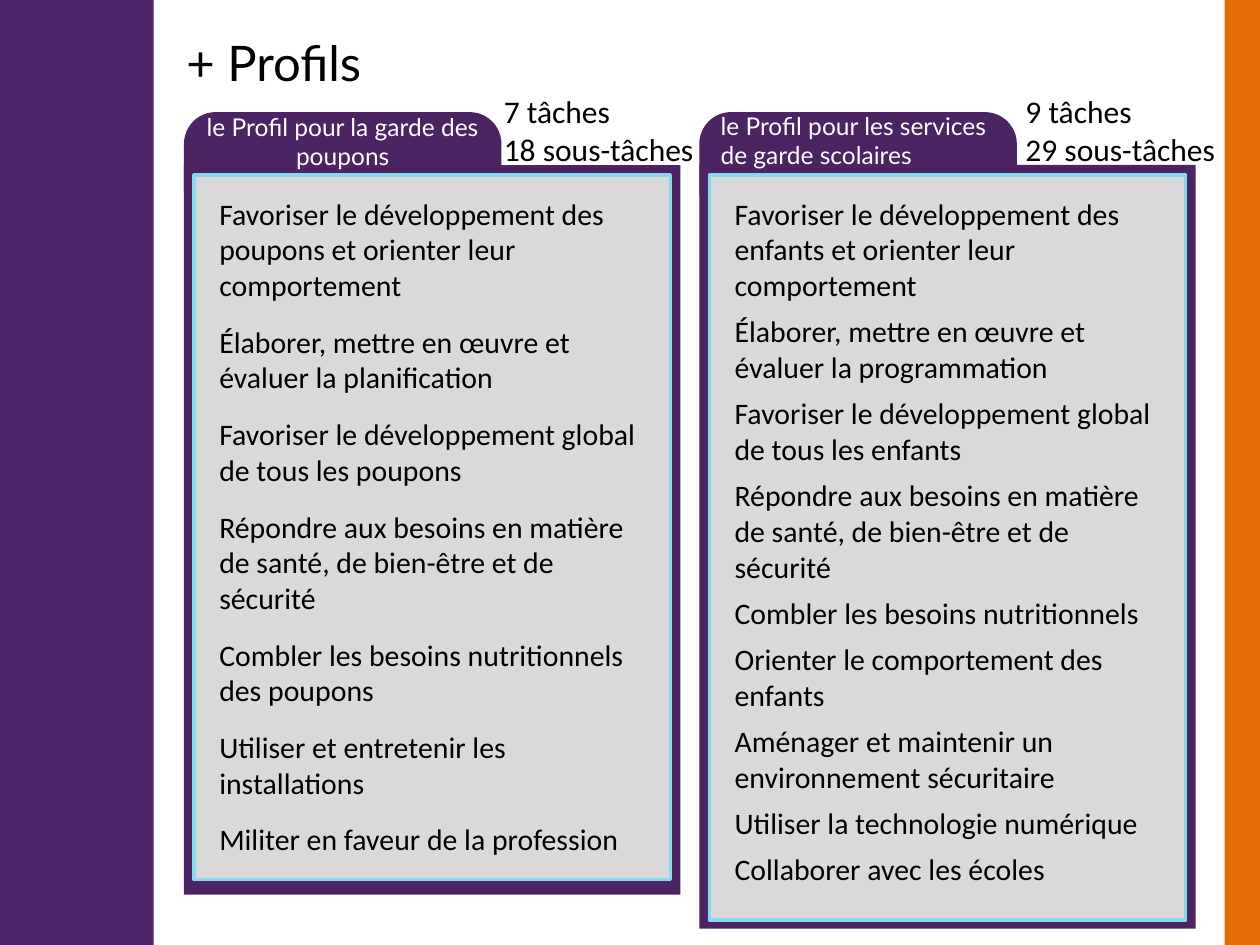
import pptx
import pptx.util
import pptx.dml.color
import pptx.enum.shapes
import pptx.enum.text
import pptx.oxml
import pptx.oxml.ns
from dataclasses import dataclass

Inches = pptx.util.Inches
Shape = pptx.enum.shapes.MSO_SHAPE
Align = pptx.enum.text.PP_ALIGN


@dataclass(frozen=True)
class Theme:
    band: str = "512569"
    edge: str = "E46C0A"
    frame: str = "4C2363"
    panel: str = "D9D9D9"
    panel_line: str = "82DCEE"
    dark: str = "000000"
    light: str = "FFFFFF"
    heading_font: str = "Lato"
    body_font: str = "Calibri"
    title_size: int = 28
    count_size: int = 18
    list_size: int = 17
    tab_size: int = 14


class SlideBuilder:
    def __init__(self, page, theme):
        self.page = page
        self.theme = theme

    def shape(self, kind, place, fill, line=None, corner=None):
        box = self.page.shapes.add_shape(kind, *map(Inches, place))
        box.shadow.inherit = False
        box.fill.solid()
        box.fill.fore_color.rgb = pptx.dml.color.RGBColor.from_string(fill)
        if line:
            box.line.color.rgb = pptx.dml.color.RGBColor.from_string(line)
            box.line.width = pptx.util.Pt(2)
        else:
            box.line.fill.background()
        if corner is not None:
            box.adjustments[0] = corner
        return box

    def set_lines(self, box, lines, font, size, color, align=Align.LEFT, after=0):
        frame = box.text_frame
        frame.word_wrap = True
        frame.auto_size = pptx.enum.text.MSO_AUTO_SIZE.NONE
        frame.vertical_anchor = pptx.enum.text.MSO_ANCHOR.TOP
        frame.text = "\n".join(lines)
        for para in frame.paragraphs:
            para.alignment = align
            para.space_before = pptx.util.Pt(0)
            para.space_after = pptx.util.Pt(after)
            for span in para.runs:
                span.font.name = font
                span.font.size = pptx.util.Pt(size)
                span.font.color.rgb = pptx.dml.color.RGBColor.from_string(color)

    def text(self, place, lines, font, size, color, align=Align.LEFT):
        box = self.page.shapes.add_textbox(*map(Inches, place))
        self.set_lines(box, lines, font, size, color, align)
        return box

    def placeholder(self, index, place):
        box = self.page.placeholders[index]
        box.left, box.top, box.width, box.height = map(Inches, place)
        # Bring the placeholder in front of the panels
        box.element.getparent().append(box.element)
        return box

    def title(self, place, wording):
        theme = self.theme
        self.set_lines(self.placeholder(0, place), [wording], theme.heading_font,
                       theme.title_size, theme.dark)

    def task_list(self, index, place, tasks, after):
        theme = self.theme
        box = self.placeholder(index, place)
        self.set_lines(box, tasks, theme.body_font, theme.list_size, theme.dark, after=after)
        for para in box.text_frame.paragraphs:
            properties = para._p.get_or_add_pPr()
            properties.set("marL", "0")
            properties.set("indent", "0")
            properties.append(pptx.oxml.parse_xml(
                f'<a:buNone {pptx.oxml.ns.nsdecls("a")}/>'))

    def profile(self, index, profile):
        theme = self.theme
        left = profile["left"]
        # Tab, frame and panel
        self.shape(Shape.ROUNDED_RECTANGLE, (left, 0.89, 2.52, 0.87), theme.frame, corner=0.29)
        self.shape(Shape.ROUNDED_RECTANGLE, (left, 1.31, 3.94, profile["frame_height"]),
                   theme.frame, corner=0)
        self.text(profile["tab_place"], [profile["name"]], theme.heading_font,
                  theme.tab_size, theme.light, profile["tab_align"])
        self.shape(Shape.RECTANGLE, (left + 0.08, 1.39, 3.78, profile["panel_height"]),
                   theme.panel, theme.panel_line)
        # Tasks and their counts
        self.task_list(index, (left + 0.18, 1.5, 3.54, profile["list_height"]),
                       profile["tasks"], profile["gap"])
        self.text((profile["count_left"], 0.68, 1.81, 0.71), profile["counts"],
                  theme.body_font, theme.count_size, theme.dark)


PROFILES = [
    {
        "left": 1.46, "frame_height": 5.79, "panel_height": 5.59, "list_height": 5.4,
        "name": "le Profil pour la garde des poupons",
        "tab_place": (1.38, 0.84, 2.68, 0.57), "tab_align": Align.CENTER,
        "count_left": 3.9, "counts": ["7 tâches", "18 sous-tâches"],
        "gap": 12,
        "tasks": [
            "Favoriser le développement des poupons et orienter leur comportement",
            "Élaborer, mettre en œuvre et évaluer la planification",
            "Favoriser le développement global de tous les poupons",
            "Répondre aux besoins en matière de santé, de bien-être et de sécurité",
            "Combler les besoins nutritionnels des poupons",
            "Utiliser et entretenir les installations",
            "Militer en faveur de la profession",
        ],
    },
    {
        "left": 5.55, "frame_height": 6.06, "panel_height": 5.91, "list_height": 5.64,
        "name": "le Profil pour les services de garde scolaires",
        "tab_place": (5.62, 0.83, 2.45, 0.81), "tab_align": Align.LEFT,
        "count_left": 8.04, "counts": ["9 tâches", "29 sous-tâches"],
        "gap": 6,
        "tasks": [
            "Favoriser le développement des enfants et orienter leur comportement",
            "Élaborer, mettre en œuvre et évaluer la programmation",
            "Favoriser le développement global de tous les enfants",
            "Répondre aux besoins en matière de santé, de bien-être et de sécurité",
            "Combler les besoins nutritionnels",
            "Orienter le comportement des enfants",
            "Aménager et maintenir un environnement sécuritaire",
            "Utiliser la technologie numérique",
            "Collaborer avec les écoles",
        ],
    },
]


def main():
    deck = pptx.Presentation()
    deck.slide_width, deck.slide_height = Inches(10), Inches(7.5)
    theme = Theme()
    # Two Content layout: a title and two lists
    builder = SlideBuilder(deck.slides.add_slide(deck.slide_layouts[3]), theme)

    # Side bands
    builder.shape(Shape.RECTANGLE, (9.72, 0, 0.28, 7.5), theme.edge)
    builder.shape(Shape.RECTANGLE, (0, 0, 1.22, 7.5), theme.band)

    # One column per profile
    for index, profile in enumerate(PROFILES, start=1):
        builder.profile(index, profile)

    builder.title((1.38, 0.21, 7.62, 0.57), "+ Profils")
    deck.save("out.pptx")


if __name__ == "__main__":
    main()
